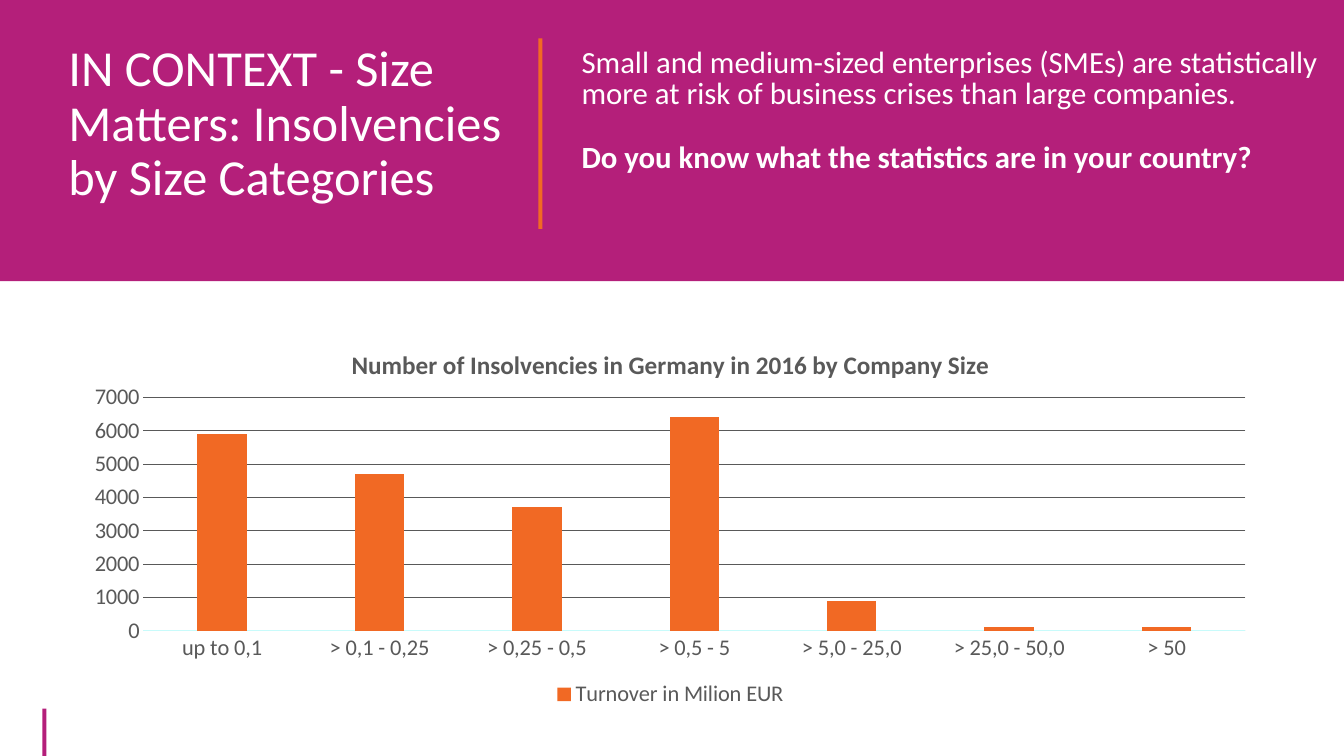
from lxml.etree import SubElement
from pptx import Presentation
from pptx.chart.data import CategoryChartData
from pptx.dml.color import RGBColor
from pptx.enum.chart import XL_CHART_TYPE, XL_LEGEND_POSITION, XL_TICK_MARK
from pptx.enum.shapes import MSO_SHAPE
from pptx.oxml.ns import qn
from pptx.util import Inches, Pt

MAGENTA = RGBColor(0xB4, 0x1F, 0x7A)
ORANGE = RGBColor(0xF1, 0x69, 0x24)
WHITE = RGBColor(0xFF, 0xFF, 0xFF)
GREY = RGBColor(0x59, 0x59, 0x59)
PALE_CYAN = RGBColor(0xC8, 0xFB, 0xFB)

INSOLVENCIES = {
    "up to 0,1": 5900,
    "> 0,1 - 0,25": 4700,
    "> 0,25 - 0,5": 3700,
    "> 0,5 - 5": 6400,
    "> 5,0 - 25,0": 900,
    "> 25,0 - 50,0": 100,
    "> 50": 100,
}


def place(parent, index, **fractions):
    """Fix a chart part at fractions of the chart's width and height."""
    layout = parent.find(qn("c:layout"))
    if layout is None:
        layout = SubElement(parent, qn("c:layout"))
        parent.insert(index, layout)
    manual = SubElement(layout, qn("c:manualLayout"))
    if "w" in fractions:
        SubElement(manual, qn("c:layoutTarget")).set("val", "inner")
    for axis in "xy":
        SubElement(manual, qn(f"c:{axis}Mode")).set("val", "edge")
    for name, value in fractions.items():
        SubElement(manual, qn(f"c:{name}")).set("val", str(value))


class SlideBuilder:
    font = "Calibri"

    def __init__(self, slide):
        self.s = slide

    def style(self, font, size, color, bold=False):
        font.name = self.font
        font.size = Pt(size)
        font.bold = bold
        font.color.rgb = color

    def box(self, left, top, width, height, color):
        sp = self.s.shapes.add_shape(
            MSO_SHAPE.RECTANGLE, Inches(left), Inches(top), Inches(width), Inches(height))
        sp.shadow.inherit = False
        sp.fill.solid()
        sp.fill.fore_color.rgb = color
        sp.line.fill.background()

    def text(self, left, top, width, height, paragraphs, size, spacing, gap=0):
        """Write (text, bold) paragraphs, with gap points between them."""
        sp = self.s.shapes.add_textbox(
            Inches(left), Inches(top), Inches(width), Inches(height))
        tf = sp.text_frame
        tf.word_wrap = True
        for i, (text, bold) in enumerate(paragraphs):
            p = tf.add_paragraph() if i else tf.paragraphs[0]
            p.line_spacing = spacing
            if i:
                p.space_before = Pt(gap)
            r = p.add_run()
            r.text = text
            self.style(r.font, size, WHITE, bold)

    def column_chart(self, left, top, width, height, title, series, values):
        data = CategoryChartData()
        data.categories = list(values)
        data.add_series(series, list(values.values()))
        chart = self.s.shapes.add_chart(
            XL_CHART_TYPE.COLUMN_CLUSTERED, Inches(left), Inches(top),
            Inches(width), Inches(height), data).chart
        self.style(chart.font, 16, GREY)

        chart.has_title = True
        r = chart.chart_title.text_frame.paragraphs[0].add_run()
        r.text = title
        self.style(r.font, 18, GREY, True)
        place(chart.chart_title._element, 1, x=0.23, y=0.05)

        chart.has_legend = True
        chart.legend.position = XL_LEGEND_POSITION.BOTTOM
        chart.legend.include_in_layout = False
        self.style(chart.legend.font, 16, GREY)

        plot = chart.plots[0]
        plot.gap_width = 219
        plot.overlap = -27
        plot.vary_by_categories = False
        fill = plot.series[0].format.fill
        fill.solid()
        fill.fore_color.rgb = ORANGE
        place(chart._chartSpace.chart.plotArea, 0, x=0.06, y=0.19, w=0.92, h=0.6)

        for axis in (chart.category_axis, chart.value_axis):
            axis.major_tick_mark = axis.minor_tick_mark = XL_TICK_MARK.NONE
            self.style(axis.tick_labels.font, 16, GREY)
        value_axis = chart.value_axis
        value_axis.minimum_scale = 0
        value_axis.maximum_scale = 7000
        value_axis.major_unit = 1000
        value_axis.format.line.fill.background()
        value_axis.has_major_gridlines = True
        for line, color in ((value_axis.major_gridlines.format.line, GREY),
                            (chart.category_axis.format.line, PALE_CYAN)):
            line.color.rgb = color
            line.width = Pt(0.75)


def main():
    prs = Presentation()
    prs.slide_width = Inches(13.33)
    prs.slide_height = Inches(7.5)
    b = SlideBuilder(prs.slides.add_slide(prs.slide_layouts[6]))

    b.box(0.42, 7.03, 0.04, 0.47, MAGENTA)
    b.box(0, 0, 13.33, 2.79, MAGENTA)
    b.text(5.67, 0.42, 7.59, 1.5, [
        ("Small and medium-sized enterprises (SMEs) are statistically "
         "more at risk of business crises than large companies.", False),
        ("Do you know what the statistics are in your country?", True),
    ], size=22, spacing=Pt(22.8), gap=22.8)
    b.text(0.58, 0.38, 4.68, 1.8, [
        ("IN CONTEXT - Size Matters: Insolvencies by Size Categories", False),
    ], size=36, spacing=0.9)
    b.box(5.34, 0.38, 0.04, 1.89, ORANGE)
    b.column_chart(0.71, 3.21, 11.88, 3.86,
                   "Number of Insolvencies in Germany in 2016 by Company Size",
                   "Turnover in Milion EUR", INSOLVENCIES)
    prs.save("out.pptx")


if __name__ == "__main__":
    main()
